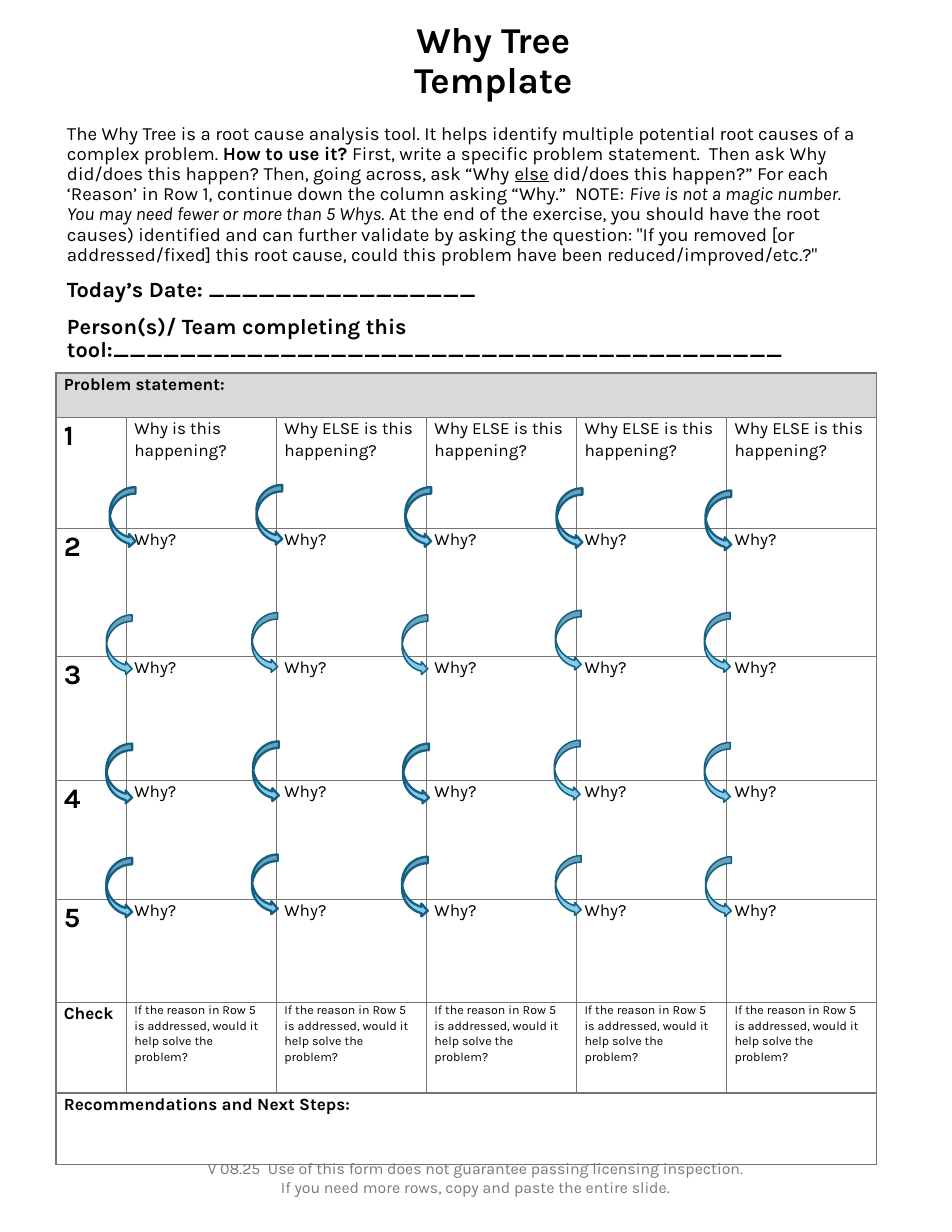
from lxml.etree import SubElement
from pptx import Presentation
from pptx.dml.color import RGBColor
from pptx.enum.shapes import MSO_SHAPE
from pptx.enum.text import MSO_ANCHOR, PP_ALIGN
from pptx.oxml.ns import qn
from pptx.util import Inches, Pt

FONT = "Karla"
COLORS = {
    "text": "000000",
    "footer": "797979",
    "band": "D9D9D9",
    "border": "747474",
    "arrow": "83CBEB",
    "arrow_line": "156082",
}

INTRO = [
    ("The Why Tree is a root cause analysis tool. It helps identify multiple "
     "potential root causes of a complex problem. ", {}),
    ("How to use it? ", {"bold": True}),
    ("First, write a specific problem statement.  Then ask Why did/does this "
     "happen? Then, going across, ask “Why ", {}),
    ("else", {"underline": True}),
    (" did/does this happen?” For each ‘Reason’ in Row 1, continue down the "
     "column asking “Why.”  NOTE: ", {}),
    ("Five is not a magic number. You may need fewer or more than 5 Whys. ",
     {"italic": True}),
    ("At the end of the exercise, you should have the root causes) identified "
     "and can further validate by asking the question: \"If you removed [or "
     "addressed/fixed] this root cause, could this problem have been "
     "reduced/improved/etc.?\"", {}),
]
FIELDS = [
    "Today’s Date: " + "_" * 16,
    "Person(s)/ Team completing this tool:" + "_" * 40,
]
FOOTER = [
    "V 08.25  Use of this form does not guarantee passing licensing inspection.",
    "If you need more rows, copy and paste the entire slide.",
]

COL_WIDTHS = [0.63] + [1.34] * 5
ROW_HEIGHTS = [0.4, 0.99, 1.14, 1.11, 1.06, 0.92, 0.81, 0.64]
LABEL = {"size": Pt(11), "bold": True}
NUMBER = {"size": Pt(18), "bold": True}
PROMPT = {"size": Pt(11), "bold": False}
CHECK = {"size": Pt(8), "bold": False}
CHECK_TEXT = "If the reason in Row 5 is addressed, would it help solve the problem?"

# Each row of arrows: (left, top, line width)
ARROWS = [
    [(0.98, 4.35, 1.5), (2.29, 4.33, 1.5), (3.62, 4.35, 1.5),
     (4.97, 4.36, 1.5), (6.3, 4.38, 1.5)],
    [(0.95, 5.49, 1), (2.25, 5.47, 1), (3.59, 5.49, 1),
     (4.96, 5.45, 1), (6.29, 5.47, 1)],
    [(0.95, 6.64, 1.5), (2.26, 6.62, 1.5), (3.6, 6.64, 1.5),
     (4.95, 6.61, 1), (6.29, 6.63, 1)],
    [(0.95, 7.66, 1.5), (2.25, 7.63, 1.5), (3.59, 7.65, 1.5),
     (4.96, 7.64, 1), (6.3, 7.65, 1)],
]


def rgb(name):
    return RGBColor.from_string(COLORS[name])


def add_run(p, text, fmt, color="text"):
    r = p.add_run()
    r.text = text
    r.font.name = FONT
    r.font.color.rgb = rgb(color)
    for name, value in fmt.items():
        setattr(r.font, name, value)


def add_text(s, box, paragraphs, anchor=MSO_ANCHOR.TOP, color="text", **layout):
    """Add a text box; each paragraph is a list of (text, format) runs."""
    tf = s.shapes.add_textbox(*map(Inches, box)).text_frame
    tf.word_wrap = True
    tf.vertical_anchor = anchor
    for i, runs in enumerate(paragraphs):
        p = tf.paragraphs[0] if i == 0 else tf.add_paragraph()
        for name, value in layout.items():
            if i or name != "space_before":
                setattr(p, name, value)
        for text, fmt in runs:
            add_run(p, text, fmt, color)


def style_cell(cell, fill=None):
    tc_pr = cell._tc.get_or_add_tcPr()
    for side in ("a:lnL", "a:lnR", "a:lnT", "a:lnB"):
        ln = SubElement(tc_pr, qn(side), w=str(Pt(1)))
        solid = SubElement(ln, qn("a:solidFill"))
        SubElement(solid, qn("a:srgbClr"), val=COLORS["border"])
    if fill:
        cell.fill.solid()
        cell.fill.fore_color.rgb = rgb(fill)
    else:
        cell.fill.background()
    cell.margin_left = cell.margin_right = Inches(0.07)
    cell.margin_top = cell.margin_bottom = 0


def write_cell(cell, text, fmt):
    p = cell.text_frame.paragraphs[0]
    p.line_spacing = 1.07
    add_run(p, text, fmt)


def add_why_table(s):
    rows = [[("Problem statement:", LABEL)]]
    first = ["Why is this happening?"] + ["Why ELSE is this happening?"] * 4
    for number in range(1, 6):
        prompts = first if number == 1 else ["Why?"] * 5
        rows.append([(str(number), NUMBER)] + [(t, PROMPT) for t in prompts])
    rows.append([("Check", LABEL)] + [(CHECK_TEXT, CHECK)] * 5)
    rows.append([("Recommendations and Next Steps:", LABEL)])

    table = s.shapes.add_table(
        len(rows), len(COL_WIDTHS), Inches(0.5), Inches(3.33),
        Inches(sum(COL_WIDTHS)), Inches(sum(ROW_HEIGHTS))).table
    table.first_row = table.horz_banding = False
    for col, width in zip(table.columns, COL_WIDTHS):
        col.width = Inches(width)
    for i, (row, height) in enumerate(zip(table.rows, ROW_HEIGHTS)):
        row.height = Inches(height)
        for cell in row.cells:
            style_cell(cell, "band" if i == 0 else None)
        if len(rows[i]) == 1:
            table.cell(i, 0).merge(table.cell(i, len(COL_WIDTHS) - 1))
        for j, (text, fmt) in enumerate(rows[i]):
            write_cell(table.cell(i, j), text, fmt)


def add_arrow(s, left, top, line_width):
    sp = s.shapes.add_shape(MSO_SHAPE.CURVED_RIGHT_ARROW, Inches(left),
                            Inches(top), Inches(0.23), Inches(0.54))
    sp.shadow.inherit = False
    sp.fill.solid()
    sp.fill.fore_color.rgb = rgb("arrow")
    sp.line.color.rgb = rgb("arrow_line")
    sp.line.width = Pt(line_width)


def main():
    prs = Presentation()
    prs.slide_width, prs.slide_height = Inches(8.5), Inches(11)
    s = prs.slides.add_slide(prs.slide_layouts[6])

    add_text(s, (0.58, 10.33, 7.33, 0.37),
             [[(line, {"size": Pt(10.2)})] for line in FOOTER],
             MSO_ANCHOR.MIDDLE, "footer", alignment=PP_ALIGN.CENTER)
    add_text(s, (3, 0.44, 2.81, 0.51),
             [[("Why Tree Template", {"size": Pt(23.4), "bold": True})]],
             MSO_ANCHOR.BOTTOM, alignment=PP_ALIGN.CENTER, line_spacing=0.9)
    intro = [(text, {"size": Pt(12), **fmt}) for text, fmt in INTRO]
    fields = [[(text, {"size": Pt(14), "bold": True})] for text in FIELDS]
    add_text(s, (0.5, 1.06, 7.33, 2.16), [intro] + fields,
             line_spacing=0.9, space_before=Pt(8.5))
    add_why_table(s)
    for row in ARROWS:
        for arrow in row:
            add_arrow(s, *arrow)

    prs.save("out.pptx")


if __name__ == "__main__":
    main()
